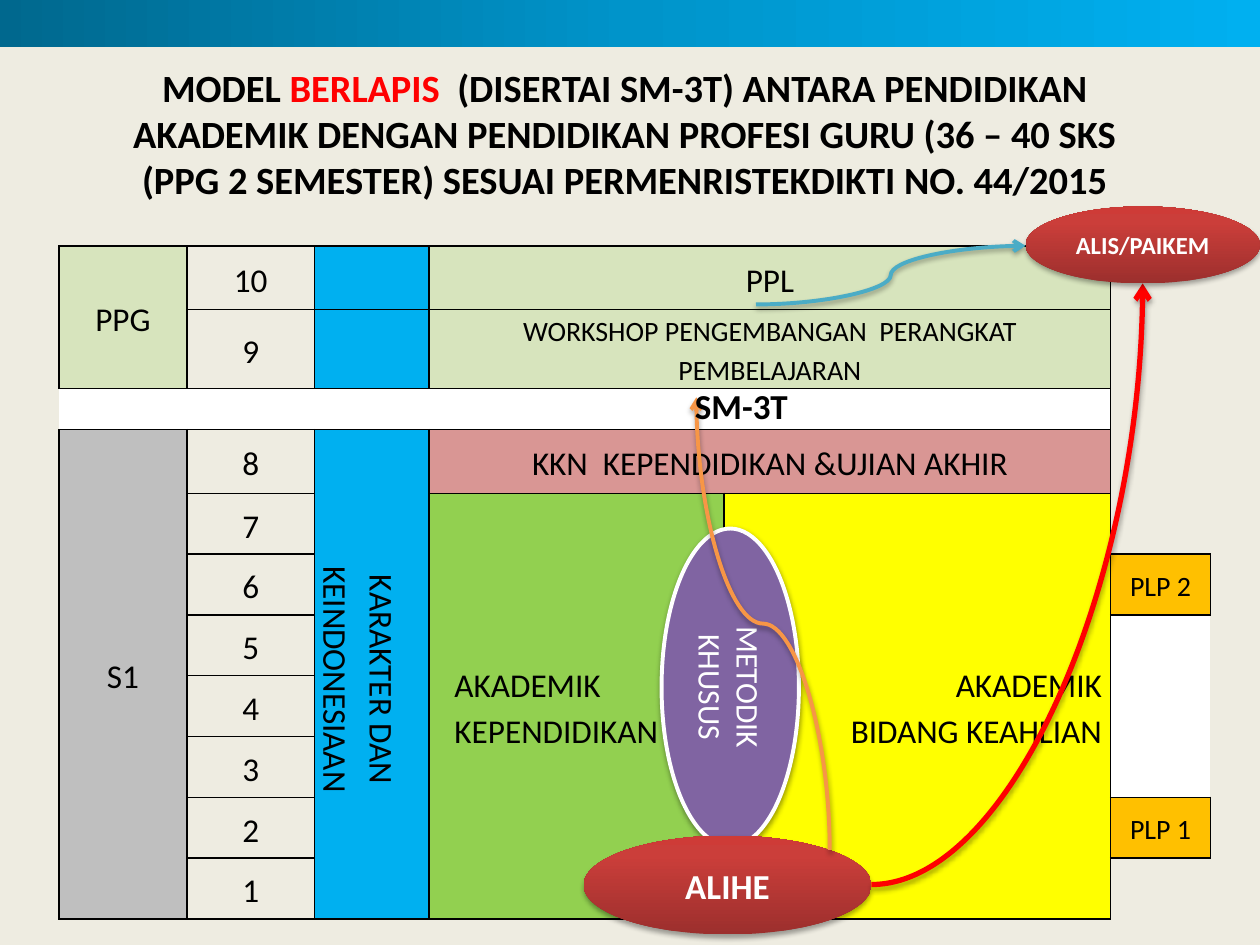
from copy import deepcopy

from pptx import Presentation
from pptx.dml.color import RGBColor
from pptx.enum.shapes import MSO_CONNECTOR as Connector, MSO_SHAPE as Preset
from pptx.enum.text import MSO_ANCHOR as Anchor, PP_ALIGN as Align
from pptx.oxml import parse_xml
from pptx.oxml.ns import nsdecls, qn
from pptx.util import Pt

FONT = "Calibri"
COLUMNS = [73, 73, 65.5, 168.5, 221, 57]
ROWS = [36.5, 36.5, 23.5, 36.5] + [34.75] * 7
SEMESTERS = {0: 10, 1: 9} | {row: 11 - row for row in range(3, 11)}
GREEN, BLUE, WHITE, AMBER = "D7E4BD", "00B0F0", "FFFFFF", "FFC000"
RED_STOPS = [(0, "9C2F2D"), (0.8, "CB3E3A"), (1, "CE3B37")]
BAR_STOPS = [(0, "00688E"), (0.5, "0094CA"), (1, BLUE)]


def color(value):
    return RGBColor.from_string(value)


def format_runs(paragraph, size, hex_color, bold=False):
    for run in paragraph.runs:
        run.font.name = FONT
        run.font.size = Pt(size)
        run.font.bold = bold
        run.font.color.rgb = color(hex_color)


def set_borders(cell, sides):
    properties = cell._tc.get_or_add_tcPr()
    for side in "LRTB":
        paint = '<a:solidFill><a:srgbClr val="000000"/></a:solidFill>' if side in sides else "<a:noFill/>"
        properties.append(parse_xml(f'<a:ln{side} {nsdecls("a")} w="{Pt(1)}">{paint}</a:ln{side}>'))


def fill_cell(table, first, last=None, text="", fill=None, size=19,
              sides="LRTB", align=Align.CENTER, indent=0, vertical=False):
    last = last or first
    origin = table.cell(*first)
    if last != first:
        origin.merge(table.cell(*last))
    for row in range(first[0], last[0] + 1):
        for column in range(first[1], last[1] + 1):
            cell = table.cell(row, column)
            set_borders(cell, sides)
            if fill:
                cell.fill.solid()
                cell.fill.fore_color.rgb = color(fill)
            else:
                cell.fill.background()
            cell.margin_left = cell.margin_right = Pt(5)
            cell.margin_top = cell.margin_bottom = 0
    origin.vertical_anchor = Anchor.MIDDLE
    if vertical:
        origin._tc.get_or_add_tcPr().set("vert", "vert")
    if not text:
        return
    origin.text_frame.text = text
    for paragraph in origin.text_frame.paragraphs:
        paragraph.alignment = align
        paragraph.line_spacing = 1.15
        paragraph._p.get_or_add_pPr().set("marL", str(Pt(indent)))
        format_runs(paragraph, size, "000000")


def add_curriculum_table(slide):
    frame = slide.shapes.add_table(len(ROWS), len(COLUMNS), Pt(33.75), Pt(140.5),
                                   Pt(sum(COLUMNS)), Pt(sum(ROWS)))
    table = frame.table
    table.first_row = table.horz_banding = False
    for column, width in zip(table.columns, COLUMNS):
        column.width = Pt(width)
    for row, height in zip(table.rows, ROWS):
        row.height = Pt(height)

    for row, semester in SEMESTERS.items():
        fill_cell(table, (row, 1), text=str(semester))
    for row in (0, 1):
        fill_cell(table, (row, 2), fill=BLUE)
    for column in range(3):
        fill_cell(table, (2, column), fill=WHITE, sides="TB")
    fill_cell(table, (2, 3), (2, 4), fill=WHITE, sides="TBR")

    fill_cell(table, (0, 0), (1, 0), "PPG", GREEN)
    fill_cell(table, (0, 3), (0, 4), "PPL", GREEN)
    fill_cell(table, (1, 3), (1, 4), "WORKSHOP PENGEMBANGAN  PERANGKAT PEMBELAJARAN", GREEN, 16)
    fill_cell(table, (3, 0), (10, 0), "S1", "BFBFBF")
    fill_cell(table, (3, 2), (10, 2), "KARAKTER DAN\nKEINDONESIAAN", BLUE, indent=6, vertical=True)
    fill_cell(table, (3, 3), (3, 4), "KKN  KEPENDIDIKAN &UJIAN AKHIR", "D99694")
    fill_cell(table, (4, 3), (10, 3), "AKADEMIK\nKEPENDIDIKAN", "92D050", align=Align.LEFT, indent=9.5)
    fill_cell(table, (4, 4), (10, 4), "AKADEMIK\nBIDANG KEAHLIAN", "FFFF00", align=Align.RIGHT)

    fill_cell(table, (0, 5), sides="L")
    fill_cell(table, (1, 5), (4, 5), sides="LB")
    fill_cell(table, (5, 5), text="PLP 2", fill=AMBER, size=16)
    fill_cell(table, (6, 5), (8, 5), fill=WHITE, sides="LTB")
    fill_cell(table, (9, 5), text="PLP 1", fill=AMBER, size=16)
    fill_cell(table, (10, 5), sides="LT")


def add_title(slide):
    title = slide.shapes.title
    title.left, title.top, title.width, title.height = Pt(66), Pt(32.5), Pt(582), Pt(87)
    title.text_frame.vertical_anchor = Anchor.MIDDLE
    paragraph = title.text_frame.paragraphs[0]
    paragraph.alignment = Align.CENTER
    for text in ("MODEL ", "BERLAPIS ",
                 " (DISERTAI SM-3T) ANTARA PENDIDIKAN AKADEMIK DENGAN PENDIDIKAN PROFESI GURU "
                 "(36 – 40 SKS (PPG 2 SEMESTER) SESUAI PERMENRISTEKDIKTI NO. 44/2015"):
        paragraph.add_run().text = text
    format_runs(paragraph, 22, "000000", True)
    paragraph.runs[1].font.color.rgb = color("FF0000")


def add_shadow(element, opacity=35, distance=1.8):
    properties = element._element.spPr
    for effects in properties.findall(qn("a:effectLst")):
        properties.remove(effects)
    properties.append(parse_xml(
        f'<a:effectLst {nsdecls("a")}><a:outerShdw blurRad="{Pt(3.1)}" dist="{Pt(distance)}" '
        f'dir="5400000" rotWithShape="0"><a:srgbClr val="000000">'
        f'<a:alpha val="{opacity * 1000}"/></a:srgbClr></a:outerShdw></a:effectLst>'))


def apply_gradient(shape, stops, angle):
    shape.fill.gradient()
    shape.fill.gradient_angle = angle
    stop_list = shape._element.spPr.find(qn("a:gradFill")).find(qn("a:gsLst"))
    stop_list.append(deepcopy(stop_list[0]))
    for stop, (position, value) in zip(shape.fill.gradient_stops, stops):
        stop.position = position
        stop.color.rgb = color(value)


def add_plain_shape(slide, preset, left, top, width, height):
    shape = slide.shapes.add_shape(preset, Pt(left), Pt(top), Pt(width), Pt(height))
    shape.line.fill.background()
    shape.shadow.inherit = False
    return shape


def set_label(shape, text, size, bold):
    shape.text_frame.text = text
    shape.text_frame.word_wrap = True
    shape.text_frame.vertical_anchor = Anchor.MIDDLE
    paragraph = shape.text_frame.paragraphs[0]
    paragraph.alignment = Align.CENTER
    format_runs(paragraph, size, WHITE, bold)


def add_red_ellipse(slide, text, size, *box):
    ellipse = add_plain_shape(slide, Preset.OVAL, *box)
    apply_gradient(ellipse, RED_STOPS, 90)
    add_shadow(ellipse)
    set_label(ellipse, text, size, True)


def add_method_ellipse(slide):
    ellipse = add_plain_shape(slide, Preset.OVAL, 326.5, 353.5, 181.5, 78.5)
    ellipse.rotation = 90
    ellipse.fill.solid()
    ellipse.fill.fore_color.rgb = color("8064A2")
    ellipse.line.color.rgb = color(WHITE)
    ellipse.line.width = Pt(2.25)
    add_shadow(ellipse, 38, 1.6)
    set_label(ellipse, "METODIK KHUSUS", 18, False)


def add_curve(slide, begin, end, value, width, geometry="curvedConnector3", rotation=0):
    curve = slide.shapes.add_connector(Connector.CURVE, *map(Pt, begin + end))
    curve.line.color.rgb = color(value)
    curve.line.width = Pt(width)
    properties = curve._element.spPr
    properties.find(qn("a:prstGeom")).set("prst", geometry)
    properties.find(qn("a:xfrm")).set("rot", str(rotation * 60000))
    properties.find(qn("a:ln")).append(parse_xml(f'<a:tailEnd {nsdecls("a")} type="arrow"/>'))
    add_shadow(curve)


def add_program_label(slide):
    box = slide.shapes.add_textbox(Pt(390), Pt(216), Pt(84), Pt(31.5))
    box.text_frame.word_wrap = True
    box.text_frame.text = "SM-3T"
    format_runs(box.text_frame.paragraphs[0], 20, "000000", True)


def main():
    presentation = Presentation()
    presentation.slide_width, presentation.slide_height = Pt(720), Pt(540)
    slide = presentation.slides.add_slide(presentation.slide_layouts[5])
    slide.background.fill.solid()
    slide.background.fill.fore_color.rgb = color("EEECE1")

    add_curriculum_table(slide)
    add_title(slide)
    add_method_ellipse(slide)
    bar = add_plain_shape(slide, Preset.RECTANGLE, 0, -2, 720, 29)
    apply_gradient(bar, BAR_STOPS, 0)
    add_red_ellipse(slide, "ALIHE", 20, 333.5, 477.5, 164.5, 56.5)
    add_curve(slide, (498, 505.5), (653, 162), "FF0000", 3, "curvedConnector2")
    add_red_ellipse(slide, "ALIS/PAIKEM", 14, 586, 118, 134, 44)
    add_curve(slide, (306.75, 394.5), (565.25, 318.25), "F79646", 2.25, rotation=270)
    add_curve(slide, (432, 174), (586, 140.5), "4BACC6", 2.25)
    add_program_label(slide)
    presentation.save("out.pptx")


if __name__ == "__main__":
    main()
